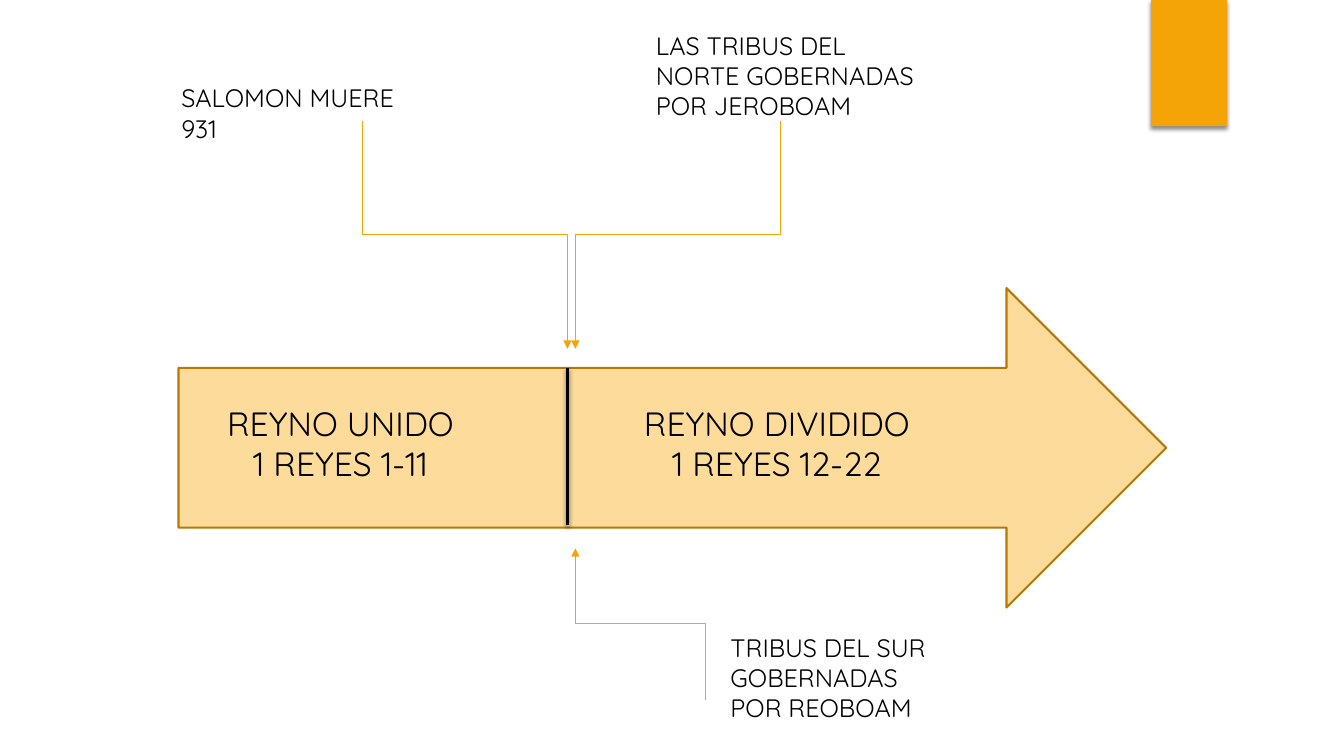
"""Build the timeline slide of the united and divided kingdoms."""
from dataclasses import dataclass

from lxml import etree
from pptx import Presentation
from pptx import util as u
from pptx.dml.color import RGBColor
from pptx.enum import shapes, text
from pptx.oxml.ns import qn


@dataclass(frozen=True)
class Theme:
    """Hold the colours, font and type sizes."""
    font: str = "Quicksand"
    ink: str = "000000"
    gold: str = "F5A408"
    pale: str = "FCDB9B"
    edge: str = "B57906"
    head: int = 24
    note: int = 18


def write(frame, words, font, size, color, align):
    """Fill a text frame with one paragraph per line of words."""
    frame.word_wrap = True
    frame.auto_size = text.MSO_AUTO_SIZE.SHAPE_TO_FIT_TEXT
    for i, line in enumerate(words.split("\n")):
        par = frame.add_paragraph() if i else frame.paragraphs[0]
        par.alignment = align
        run = par.add_run()
        run.text = line
        run.font.name = font
        run.font.size = u.Pt(size)
        run.font.color.rgb = RGBColor.from_string(color)


def shade(item):
    """Give a shape or line a soft shadow below it."""
    props = item.element.spPr
    for old in props.findall(qn("a:effectLst")):
        props.remove(old)
    fx = etree.SubElement(props, qn("a:effectLst"))
    cast = etree.SubElement(fx, qn("a:outerShdw"), blurRad=str(u.Pt(3)),
                            dist=str(u.Pt(2)), dir="5400000", rotWithShape="0")
    color = etree.SubElement(cast, qn("a:srgbClr"), val="000000")
    etree.SubElement(color, qn("a:alpha"), val="45000")


class Board:
    """Draw styled elements on the current slide."""

    def __init__(self, deck, theme):
        """Add a blank slide to the deck."""
        self.theme = theme
        self.slide = deck.slides.add_slide(deck.slide_layouts[6])

    def shape(self, kind, box, fill, edge=None):
        """Add a filled preset shape."""
        item = self.slide.shapes.add_shape(kind, *map(u.Cm, box))
        item.shadow.inherit = False
        item.fill.solid()
        item.fill.fore_color.rgb = RGBColor.from_string(fill)
        if edge:
            item.line.color.rgb = RGBColor.from_string(edge)
            item.line.width = u.Pt(1.5)
        else:
            item.line.fill.background()
        return item

    def label(self, box, words, size, align=text.PP_ALIGN.LEFT):
        """Add a text box."""
        item = self.slide.shapes.add_textbox(*map(u.Cm, box))
        write(item.text_frame, words, font=self.theme.font, size=size,
              color=self.theme.ink, align=align)

    def line(self, kind, ends, color, width):
        """Add a connector without a shadow."""
        item = self.slide.shapes.add_connector(kind, *map(u.Cm, ends))
        item.line.color.rgb = RGBColor.from_string(color)
        item.line.width = u.Pt(width)
        etree.SubElement(item.element.spPr, qn("a:effectLst"))
        return item

    def elbow(self, x1, y1, x2, y2):
        """Add a bent arrow that leaves and arrives upright."""
        midx, midy = (x1 + x2) / 2, (y1 + y2) / 2
        long, wide = abs(y2 - y1) / 2, abs(x2 - x1) / 2
        down = y2 > y1
        if (x2 > x1) == down:
            wide = -wide
        ends = (midx - long, midy - wide, midx + long, midy + wide)
        item = self.line(shapes.MSO_CONNECTOR.ELBOW, ends, self.theme.gold, 0.75)
        turn = 90 if down else 270
        item.element.spPr.find(qn("a:xfrm")).set("rot", str(turn * 60000))
        etree.SubElement(item.line._get_or_add_ln(), qn("a:tailEnd"), type="triangle")


def main():
    """Compose and save the slide."""
    deck = Presentation()
    deck.slide_width, deck.slide_height = u.Cm(33.87), u.Cm(19.05)
    theme = Theme()
    board = Board(deck, theme)
    kinds = shapes.MSO_SHAPE

    shade(board.shape(kinds.RECTANGLE, (29.01, 0, 1.91, 3.18), theme.gold))
    board.shape(kinds.RIGHT_ARROW, (4.5, 7.26, 24.89, 8.05), theme.pale, theme.edge)

    split = 14.3
    shade(board.line(shapes.MSO_CONNECTOR.STRAIGHT, (split, 9.27, split, 13.23),
                     theme.ink, 2.25))

    eras = [(4.95, 7.26, "REYNO UNIDO\n1 REYES 1-11"),
            (15.7, 7.75, "REYNO DIVIDIDO\n1 REYES 12-22")]
    for left, wide, words in eras:
        board.label((left, 10.03, wide, 2.31), words, theme.head,
                    text.PP_ALIGN.CENTER)

    side = split + 0.2
    events = [
        ((9.14, 3.05, split, 8.79), (4.32, 1.96, 6.05, 1.8),
         "SALOMON MUERE 931"),
        ((19.66, 3.05, side, 8.79), (16.28, 0.64, 7.44, 2.57),
         "LAS TRIBUS DEL NORTE GOBERNADAS POR JEROBOAM"),
        ((17.78, 17.63, side, 13.82), (18.16, 15.8, 5.82, 2.57),
         "TRIBUS DEL SUR GOBERNADAS POR REOBOAM"),
    ]
    for ends, box, words in events:
        board.elbow(*ends)
        board.label(box, words, theme.note)

    deck.save("out.pptx")


if __name__ == "__main__":
    main()
